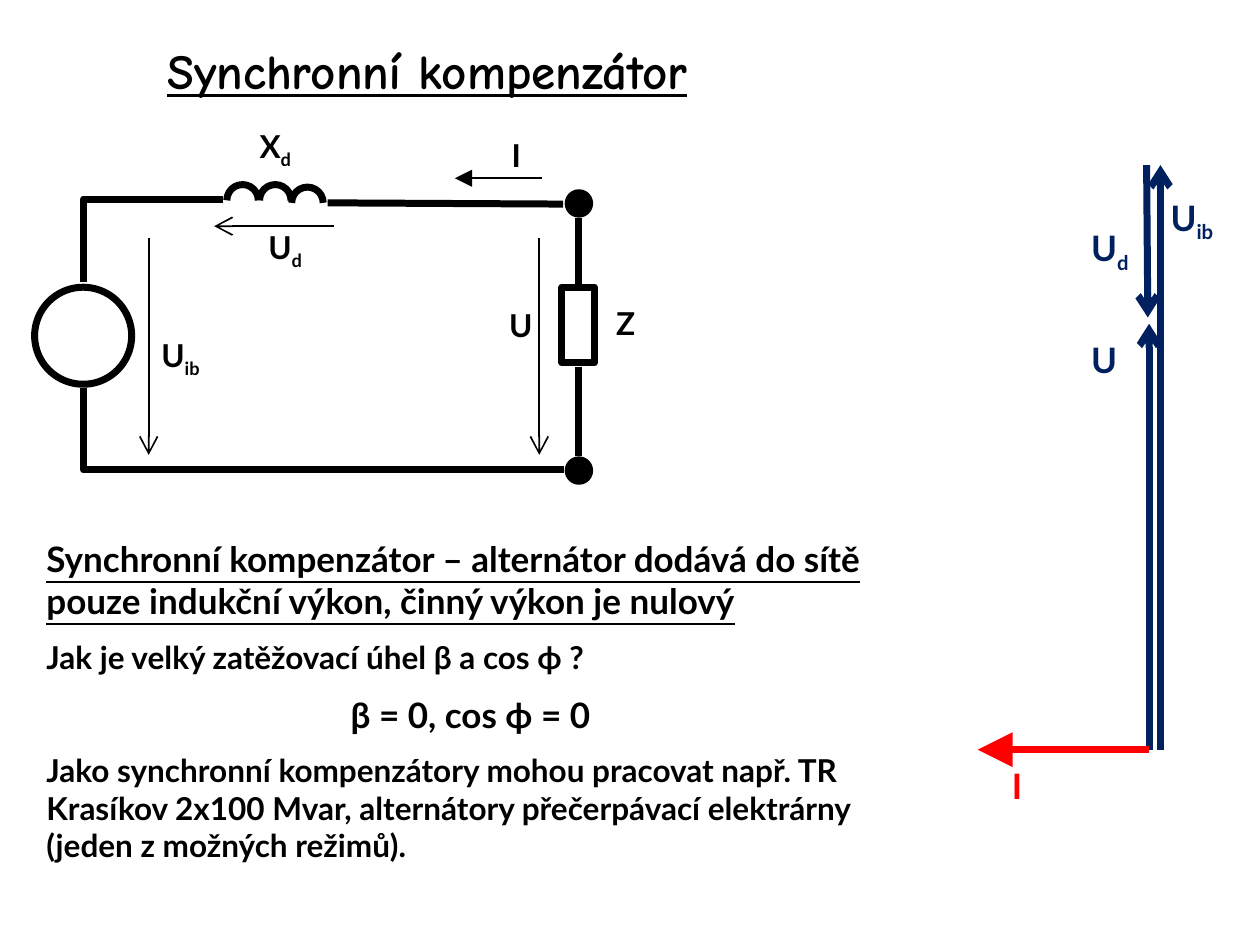
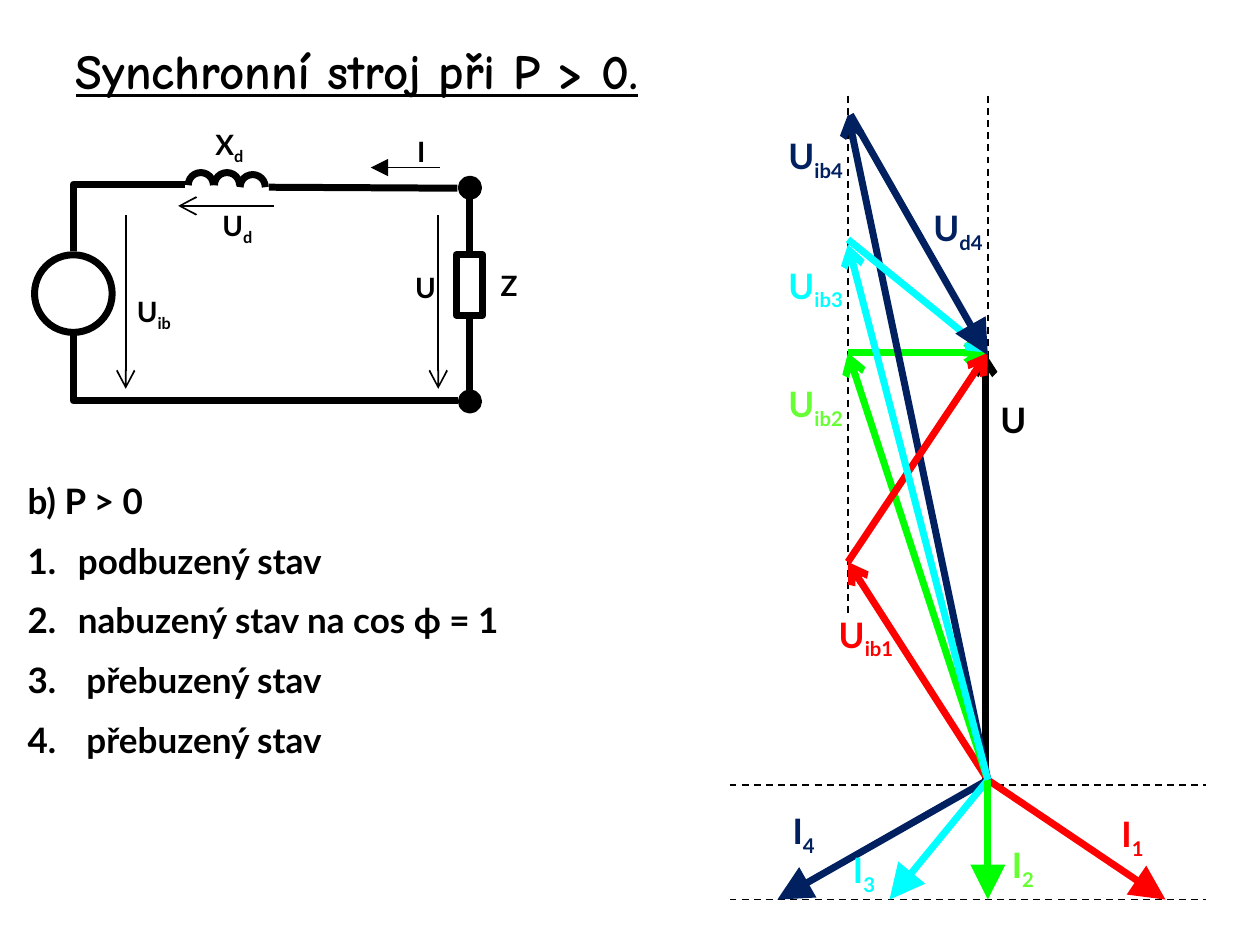
from dataclasses import dataclass

from lxml import etree
from pptx import Presentation
from pptx import util as u
from pptx.dml.color import RGBColor
from pptx.enum import dml, shapes, text
from pptx.oxml import ns

COLUMNS, ROWS = 100, 75


@dataclass(frozen=True)
class Theme:
    black: str = "000000"
    navy: str = "002060"
    red: str = "FF0000"
    green: str = "00FF00"
    lime: str = "66FF33"
    cyan: str = "00FFFF"
    title_font: str = "Comic Neue"
    body_font: str = "Lato"
    title_size: int = 28
    lead_size: int = 20
    body_size: int = 18
    small_size: int = 16
    thick: int = 4
    thin: int = 1
    inset: float = 0.04


THEME = Theme()


class Deck:
    def __init__(self, theme):
        self.theme = theme
        self.presentation = Presentation()
        self.presentation.slide_width = u.Inches(10)
        self.presentation.slide_height = u.Inches(7.5)
        self.slide = None

    def x(self, columns):
        return round(self.presentation.slide_width * columns / COLUMNS)

    def y(self, rows):
        return round(self.presentation.slide_height * rows / ROWS)

    def box(self, left, top, width, height):
        return self.x(left), self.y(top), self.x(width), self.y(height)

    def run(self, paragraph, words, size, color=None, font=None, underline=False, subscript=False):
        run = paragraph.add_run()
        run.text = words
        run.font.name = font or self.theme.body_font
        run.font.size = u.Pt(size)
        run.font.bold = True
        run.font.underline = underline
        run.font.color.rgb = RGBColor.from_string(color or self.theme.black)
        if subscript:
            run._r.get_or_add_rPr().set("baseline", "-25000")

    def new_slide(self, title, width):
        self.slide = self.presentation.slides.add_slide(self.presentation.slide_layouts[5])
        shape = self.slide.shapes.title
        shape.left, shape.top, shape.width, shape.height = self.box(1.2, 2.1, width, 6.9)
        frame = shape.text_frame
        frame.auto_size = text.MSO_AUTO_SIZE.NONE
        frame.vertical_anchor = text.MSO_ANCHOR.MIDDLE
        paragraph = frame.paragraphs[0]
        paragraph.alignment = text.PP_ALIGN.CENTER
        self.run(paragraph, title, self.theme.title_size, font=self.theme.title_font, underline=True)

    def body(self, box, paragraphs, hanging=0):
        frame = self.slide.shapes.add_textbox(*self.box(*box)).text_frame
        frame.word_wrap = True
        frame.auto_size = text.MSO_AUTO_SIZE.SHAPE_TO_FIT_TEXT
        for index, (words, size, alignment, underline) in enumerate(paragraphs):
            paragraph = frame.add_paragraph() if index else frame.paragraphs[0]
            paragraph.alignment = alignment
            if index:
                paragraph.space_before = u.Pt(size / 2)
            if hanging:
                properties = paragraph._p.get_or_add_pPr()
                properties.set("marL", str(self.x(hanging)))
                properties.set("indent", str(-self.x(hanging)))
            self.run(paragraph, words, size, underline=underline)

    def label(self, symbol, subscript, left, top, width, color, size, right=False):
        inset = u.Inches(self.theme.inset)
        height = round(u.Pt(size * 1.2)) + 2 * inset
        shape = self.slide.shapes.add_textbox(self.x(left), self.y(top), self.x(width), height)
        frame = shape.text_frame
        frame.margin_left = frame.margin_right = frame.margin_top = frame.margin_bottom = inset
        frame.word_wrap = right
        frame.auto_size = text.MSO_AUTO_SIZE.SHAPE_TO_FIT_TEXT
        frame.vertical_anchor = text.MSO_ANCHOR.MIDDLE
        paragraph = frame.paragraphs[0]
        paragraph.alignment = text.PP_ALIGN.RIGHT if right else text.PP_ALIGN.LEFT
        self.run(paragraph, symbol, size, color)
        if subscript:
            self.run(paragraph, subscript, size, color, subscript=True)

    def line(self, start, end, color, weight, head=None, dashed=False):
        connector = self.slide.shapes.add_connector(
            shapes.MSO_CONNECTOR.STRAIGHT,
            self.x(start[0]), self.y(start[1]), self.x(end[0]), self.y(end[1]))
        connector.line.color.rgb = RGBColor.from_string(color)
        connector.line.width = u.Pt(weight)
        if dashed:
            connector.line.dash_style = dml.MSO_LINE.DASH
        if head:
            open_thick = head == "arrow" and weight == self.theme.thick
            size = "med" if open_thick else "lg"
            etree.SubElement(connector.line._get_or_add_ln(), ns.qn("a:tailEnd"),
                             type=head, w=size, len=size)
        etree.SubElement(connector._element.spPr, ns.qn("a:effectLst"))

    def outline(self, shape, filled=False):
        shape.shadow.inherit = False
        black = RGBColor.from_string(self.theme.black)
        if filled:
            shape.fill.solid()
            shape.fill.fore_color.rgb = black
        else:
            shape.fill.background()
        shape.line.color.rgb = black
        shape.line.width = u.Pt(self.theme.thick)

    def preset(self, kind, center, width, height, filled=False):
        box = self.box(center[0] - width / 2, center[1] - height / 2, width, height)
        shape = self.slide.shapes.add_shape(kind, *box)
        self.outline(shape, filled)
        return shape

    def wire(self, points):
        corners = [(self.x(column), self.y(row)) for column, row in points]
        builder = self.slide.shapes.build_freeform(*corners[0])
        builder.add_line_segments(corners[1:], close=False)
        self.outline(builder.convert_to_shape())

    def circuit(self, scale, size):
        left, top = 2.7, 9.9
        black, thin, thick = self.theme.black, self.theme.thin, self.theme.thick

        def at(column, row):
            return left + (column - left) * scale, top + (row - top) * scale

        for start, end, head in [
            ((11.8, 18.9), (11.8, 36.1), "arrow"),
            ((42.8, 18.9), (42.8, 36.1), "arrow"),
            ((26.5, 17.95), (17, 17.95), "arrow"),
            ((43, 14.15), (36.1, 14.15), "triangle"),
        ]:
            self.line(at(*start), at(*end), black, thin, head)

        for symbol, subscript, column, row, width in [
            ("U", "ib", 12.4, 26.5, 4.2), ("U", "d", 20.9, 17.9, 3.7),
            ("U", "", 40, 23.9, 2.6), ("X", "d", 20.2, 9.9, 3.6),
            ("Z", "", 48.5, 23.7, 2.4), ("I", "", 40.2, 10.4, 2),
        ]:
            fitted = 0.8 + (width - 0.8) * size / self.theme.body_size
            self.label(symbol, subscript, *at(column, row), fitted, black, size)

        kinds = shapes.MSO_SHAPE
        self.preset(kinds.OVAL, at(6.6, 26.65), 7.7 * scale, 7.7 * scale)
        self.preset(kinds.RECTANGLE, at(45.9, 25.8), 2.6 * scale, 6 * scale)
        for row in (16.15, 37.35):
            self.preset(kinds.OVAL, at(45.95, row), 1.7 * scale, 1.7 * scale, filled=True)
        for column, row in ((19.25, 15.9), (21.85, 15.9), (24.4, 16.1)):
            arc = self.preset(kinds.ARC, at(column, row), 2.5 * scale, 2.5 * scale)
            arc.adjustments[0], arc.adjustments[1] = 108, 0

        for start, end in [((45.95, 17.3), (45.95, 22.5)), ((45.95, 29.1), (45.95, 36.2)),
                           ((26, 16.1), (44.7, 16.2))]:
            self.line(at(*start), at(*end), black, thick)
        self.wire([at(6.6, 22.4), at(6.6, 15.8), at(17.7, 15.8)])
        self.wire([at(6.6, 30.8), at(6.6, 37.3), at(44.8, 37.3)])

    def phasors(self, arrows):
        for start, end, color, head in arrows:
            self.line(start, end, color, self.theme.thick, head)

    def phasor_labels(self, labels):
        for symbol, subscript, left, top, width, color, right in labels:
            self.label(symbol, subscript, left, top, width, color, self.theme.lead_size, right)


def compensator_slide(deck):
    theme = deck.theme
    left, center = text.PP_ALIGN.LEFT, text.PP_ALIGN.CENTER
    deck.new_slide("Synchronní kompenzátor", 65.4)
    deck.body((2.7, 42.2, 69.3, 31.3), [
        ("Synchronní kompenzátor – alternátor dodává do sítě pouze indukční výkon, "
         "činný výkon je nulový", theme.lead_size, left, True),
        ("Jak je velký zatěžovací úhel β a cos ϕ ?", theme.body_size, left, False),
        ("β = 0, cos ϕ = 0", theme.lead_size, center, False),
        ("Jako synchronní kompenzátory mohou pracovat např. TR Krasíkov 2x100 Mvar, "
         "alternátory přečerpávací elektrárny (jeden z možných režimů).",
         theme.body_size, left, False),
    ])
    deck.circuit(1, theme.body_size)
    origin = (91.2, 59.5)
    deck.phasors([
        (origin, (91.2, 25.7), theme.navy, "arrow"),
        (origin, (77.6, 59.5), theme.red, "triangle"),
        ((91, 13.1), (91.1, 25.2), theme.navy, "arrow"),
        ((92.1, 59.5), (92.1, 13.1), theme.navy, "arrow"),
    ])
    deck.phasor_labels([
        ("I", "", 79.9, 60.3, 2.1, theme.red, False),
        ("U", "", 86.2, 26.5, 2.8, theme.navy, False),
        ("U", "d", 86.2, 17.8, 4, theme.navy, False),
        ("U", "ib", 92.5, 15.4, 4.6, theme.navy, False),
    ])


def machine_slide(deck):
    theme = deck.theme
    deck.new_slide("Synchronní stroj při P > 0.", 54.3)
    states = ["b) P > 0", "1.\tpodbuzený stav", "2.\tnabuzený stav na cos ϕ = 1",
              "3.\t přebuzený stav", "4.\t přebuzený stav"]
    deck.body((1.2, 37.6, 55.1, 24.3),
              [(state, theme.lead_size, text.PP_ALIGN.LEFT, False) for state in states],
              hanging=4)
    deck.circuit(0.8, theme.small_size)

    axis, locus, base = 78.4, 67.3, 71.4
    for column in (axis, locus):
        deck.line((column, 7.6), (column, 48.7), theme.black, theme.thin, dashed=True)
    for row in (62.3, base):
        deck.line((57.9, row), (95.7, row), theme.black, theme.thin, dashed=True)

    origin, voltage = (axis, 61.9), (axis, 28)
    deck.phasors([
        ((78.2, 61.9), (78.2, 28), theme.black, "arrow"),
        (origin, (92.5, base), theme.red, "triangle"),
        (origin, (locus, 44.6), theme.red, "arrow"),
        ((locus, 28), voltage, theme.green, "arrow"),
        (origin, (locus, 28), theme.green, "arrow"),
        (origin, (61.7, base), theme.navy, "triangle"),
        (origin, (locus, 9.1), theme.navy, "arrow"),
        (origin, (70.6, base), theme.cyan, "triangle"),
        ((locus, 44.6), voltage, theme.red, "arrow"),
        (origin, (axis, base), theme.green, "triangle"),
        ((locus, 19), voltage, theme.cyan, "arrow"),
        (origin, (locus, 19.4), theme.cyan, "arrow"),
        ((67.5, 9.1), (axis, 28.2), theme.navy, "triangle"),
    ])
    deck.phasor_labels([
        ("I", "1", 88.6, 64.3, 3.3, theme.red, False),
        ("I", "2", 79.9, 66.8, 3.3, theme.lime, False),
        ("I", "3", 67.3, 67.2, 3.3, theme.cyan, False),
        ("I", "4", 62.5, 64.1, 3.3, theme.navy, False),
        ("U", "", 79, 31.2, 2.8, theme.black, False),
        ("U", "ib1", 64.2, 48.5, 7.1, theme.red, True),
        ("U", "ib2", 60.2, 30.2, 7.1, theme.lime, True),
        ("U", "ib3", 60.2, 20.8, 7.1, theme.cyan, True),
        ("U", "ib4", 60.2, 10.5, 7.1, theme.navy, True),
        ("U", "d4", 71.3, 16.2, 7.1, theme.navy, True),
    ])


def main():
    deck = Deck(THEME)
    compensator_slide(deck)
    machine_slide(deck)
    deck.presentation.save("out.pptx")


if __name__ == "__main__":
    main()
